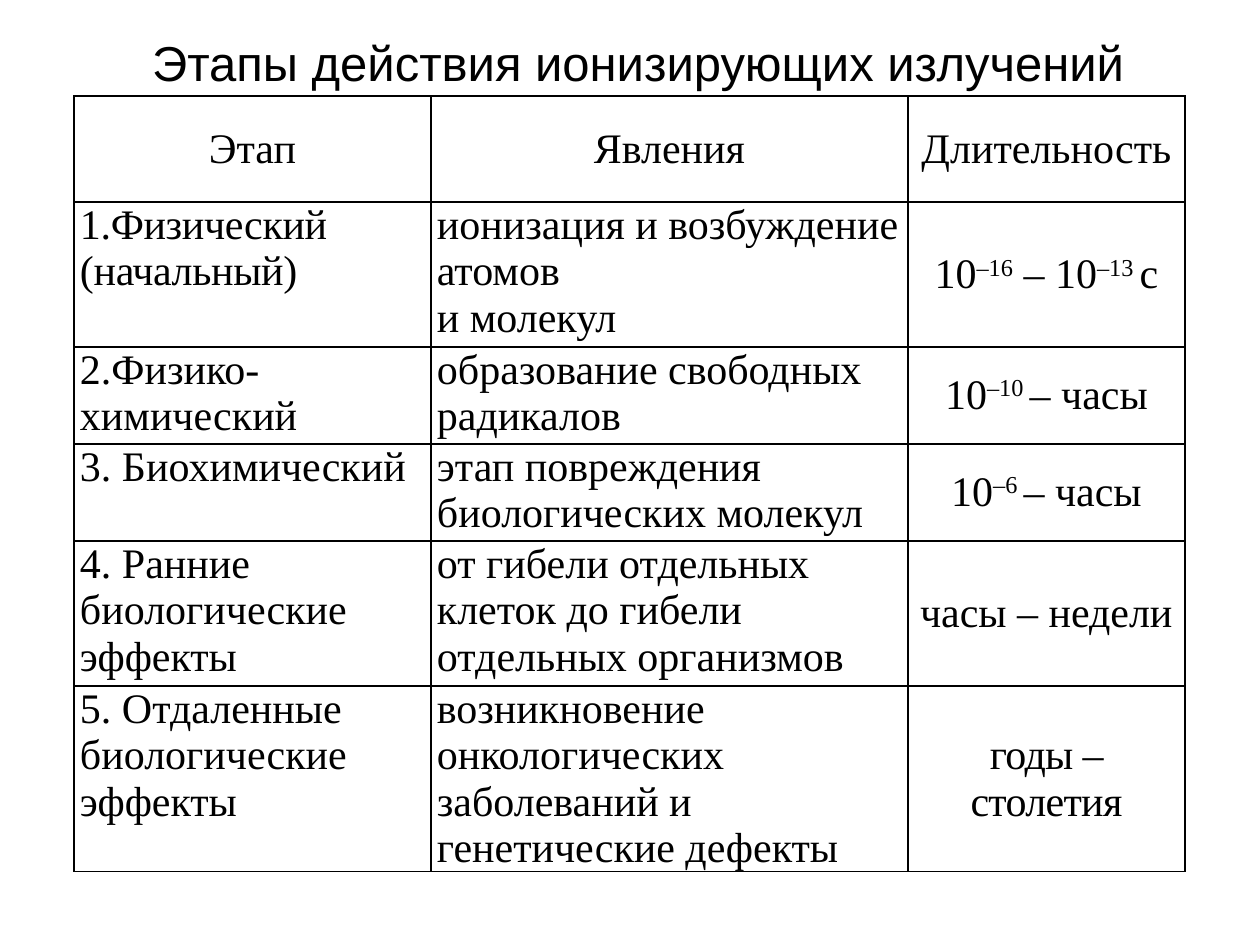
from lxml.etree import SubElement
from pptx import Presentation
from pptx.dml.color import RGBColor
from pptx.enum.text import MSO_ANCHOR, PP_ALIGN
from pptx.oxml.ns import qn
from pptx.util import Pt

PX = 914400 / 126
COLORS = {"ink": "000000", "paper": "FFFFFF"}
COLUMNS = [357, 477, 277]
ROW_HEIGHTS = [106, 145, 97, 97, 145, 145]
STAGES = [
    ["Этап", "Явления", "Длительность"],
    ["1.Физический\n(начальный)", "ионизация и возбуждение атомов\nи молекул",
     "10^–16^ – 10^–13 ^с"],
    ["2.Физико-химический", "образование свободных радикалов", "10^–10 ^– часы"],
    ["3. Биохимический", "этап повреждения биологических молекул", "10^–6 ^– часы"],
    ["4. Ранние биологические эффекты",
     "от гибели отдельных клеток до гибели отдельных организмов", "часы – недели"],
    ["5. Отдаленные биологические эффекты",
     "возникновение онкологических заболеваний и генетические дефекты",
     "годы – столетия"],
]
SPACING = {(1, 0): -20, (5, 2): -40}


def px(n):
    """Convert px to EMU."""
    return round(n * PX)


def color(name):
    """Look up a named colour."""
    return RGBColor.from_string(COLORS[name])


def add_run(p, text, font, size, raised=False, spacing=0):
    """Add one styled run, raised for a superscript."""
    r = p.add_run()
    r.text = text
    r.font.name, r.font.size = font, Pt(size)
    r.font.color.rgb = color("ink")
    if raised:
        r.font._element.set("baseline", "30000")
    if spacing:
        r.font._element.set("spc", str(spacing))


def add_title(slide, text):
    """Add the centred title."""
    sp = slide.shapes.add_textbox(px(134), px(26), px(1008), px(72))
    tf = sp.text_frame
    tf.word_wrap = False
    tf.vertical_anchor = MSO_ANCHOR.MIDDLE
    p = tf.paragraphs[0]
    p.alignment = PP_ALIGN.CENTER
    add_run(p, text, "Arial", 28)


def set_borders(cell):
    """Give a cell thin lines on all sides, placed before its fill."""
    tc_pr = cell._tc.get_or_add_tcPr()
    for i, side in enumerate(("lnL", "lnR", "lnT", "lnB")):
        ln = SubElement(tc_pr, qn(f"a:{side}"), w=str(Pt(1)))
        fill = SubElement(ln, qn("a:solidFill"))
        SubElement(fill, qn("a:srgbClr"), val=COLORS["ink"])
        tc_pr.insert(i, ln)


def fill_cell(cell, text, centered, middle, spacing):
    """Write a cell, one paragraph a line and superscripts between carets."""
    cell.margin_left = cell.margin_right = px(6)
    cell.margin_top = cell.margin_bottom = 0
    cell.vertical_anchor = MSO_ANCHOR.MIDDLE if middle else MSO_ANCHOR.TOP
    cell.fill.solid()
    cell.fill.fore_color.rgb = color("paper")
    set_borders(cell)
    tf = cell.text_frame
    for i, line in enumerate(text.split("\n")):
        p = tf.add_paragraph() if i else tf.paragraphs[0]
        p.alignment = PP_ALIGN.CENTER if centered else PP_ALIGN.LEFT
        for j, part in enumerate(line.split("^")):
            add_run(p, part, "Times New Roman", 24, j % 2 == 1, spacing)


def add_stage_table(slide):
    """Add the table of stages, phenomena and durations."""
    table = slide.shapes.add_table(
        len(STAGES), len(COLUMNS), px(74), px(96),
        px(sum(COLUMNS)), px(sum(ROW_HEIGHTS))).table
    for column, width in zip(table.columns, COLUMNS):
        column.width = px(width)
    for row, height in zip(table.rows, ROW_HEIGHTS):
        row.height = px(height)
    for i, stage in enumerate(STAGES):
        for j, text in enumerate(stage):
            centered = i == 0 or j == 2
            fill_cell(table.cell(i, j), text, centered, centered,
                      SPACING.get((i, j), 0))


def main():
    """Build and save the slide."""
    prs = Presentation()
    prs.slide_width, prs.slide_height = px(1260), px(945)
    slide = prs.slides.add_slide(prs.slide_layouts[6])
    add_stage_table(slide)
    add_title(slide, "Этапы действия ионизирующих излучений")
    prs.save("out.pptx")


if __name__ == "__main__":
    main()
